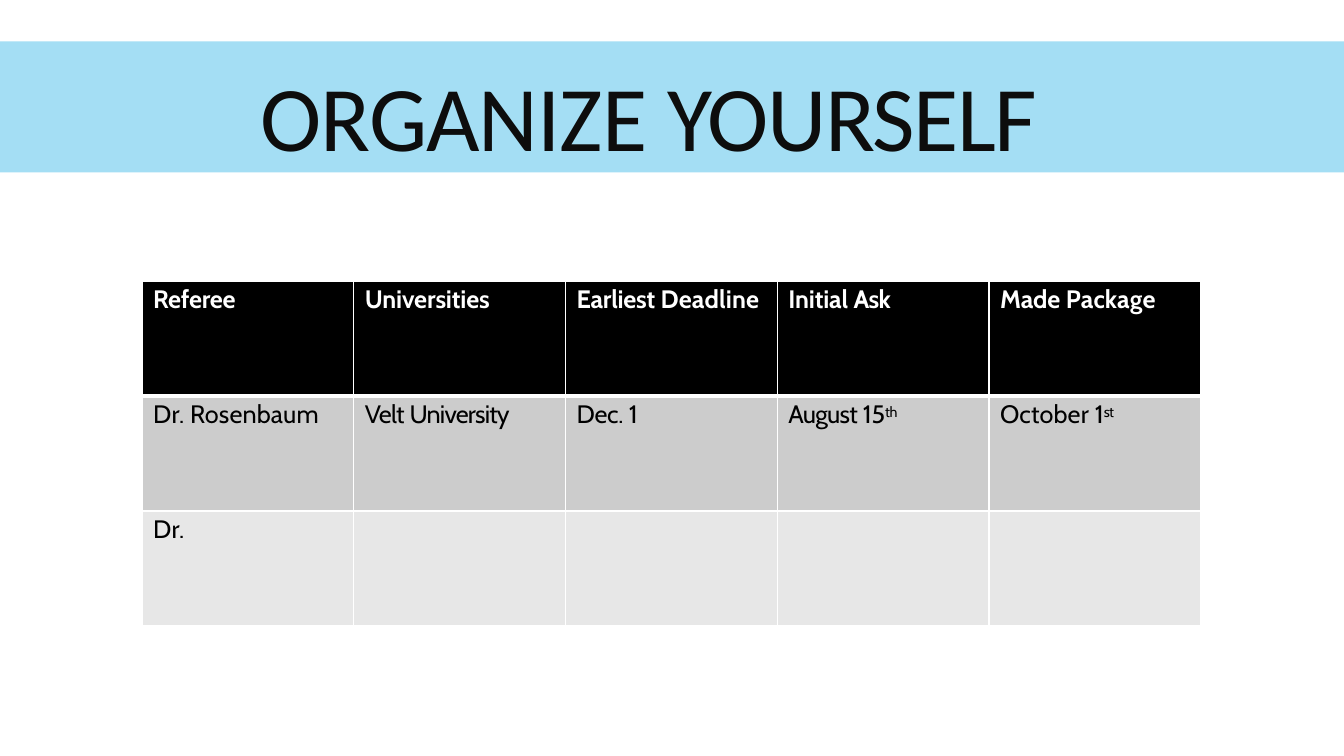
from lxml.etree import SubElement
from pptx import Presentation
from pptx.dml.color import RGBColor
from pptx.enum.shapes import MSO_SHAPE as Shape
from pptx.enum.text import MSO_ANCHOR as Anchor, PP_ALIGN as Align
from pptx.oxml import parse_xml
from pptx.oxml.ns import nsdecls, qn
from pptx.util import Inches, Pt

TITLE = [("ORGANIZE ", -0.7), ("YOURSELF", -1.1)]
ROWS = [
    [[("Referee", -0.2)], [("Universities", -0.1)],
     [("Earliest ", -0.2), ("Deadline", 0.1)],
     [("Initial ", -0.1), ("Ask", -0.5)],
     [("Made ", -0.1), ("Package", 0.1)]],
    [[("Dr. Rosenbaum", 0.1)],
     [("Velt ", -0.5), ("University", -0.6)],
     [("Dec. ", -0.2), ("1", -0.6)],
     [("August ", -0.5), ("15", -0.2), ("th", -0.4, 25)],
     [("October ", 0.1), ("1", -0.3), ("st", -0.5, 25)]],
    [[("Dr.", 0.1)], [], [], [], []],
]
ROW_FILLS = ["000000", "CCCCCC", "E7E7E7"]
ROW_INKS = ["FFFFFF", "000000", "000000"]
WIDTH, HEIGHT = 13.33, 7.5
COL_W, ROW_H = 2.1, 1.14


def color(code):
    return RGBColor.from_string(code)


def write(p, parts, font, size, ink, bold=False):
    for text, spacing, *raised in parts:
        r = p.add_run()
        r.text = text
        r.font.name, r.font.size, r.font.bold = font, Pt(size), bold
        r.font.color.rgb = color(ink)
        rPr = r.font._element
        rPr.set("spc", str(round(spacing * 100)))
        if raised:
            rPr.set("baseline", str(raised[0] * 1000))


def add_borders(cell, row):
    tcPr = cell._tc.get_or_add_tcPr()
    widths = {"L": 1, "R": 1, "T": 3 if row == 1 else 1, "B": 3 if row == 0 else 1}
    for i, (side, width) in enumerate(widths.items()):
        ln = parse_xml(f'<a:ln{side} {nsdecls("a")} w="{Pt(width)}"/>')
        fill = SubElement(ln, qn("a:solidFill"))
        SubElement(fill, qn("a:srgbClr"), val="FFFFFF")
        tcPr.insert(i, ln)


prs = Presentation()
prs.slide_width, prs.slide_height = Inches(WIDTH), Inches(HEIGHT)
s = prs.slides.add_slide(prs.slide_layouts[5])

band = s.shapes.add_shape(Shape.RECTANGLE, 0, Inches(0.41), prs.slide_width, Inches(1.3))
band.shadow.inherit = False
band.fill.solid()
band.fill.fore_color.rgb = color("A4DEF4")
band.line.fill.background()

title = s.shapes.title
title._element.addprevious(band._element)
title.left, title.top, title.width, title.height = map(Inches, (1.12, 0.31, 10.63, 1.64))
tf = title.text_frame
tf.word_wrap = True
tf.vertical_anchor = Anchor.MIDDLE
tf.margin_left = tf.margin_right = tf.margin_bottom = 0
tf.margin_top = Inches(0.01)
p = tf.paragraphs[0]
p.alignment = Align.CENTER
p.space_before = Pt(1.1)
write(p, TITLE, "Calibri", 66, "0D0D0D")

n_rows, n_cols = len(ROWS), len(ROWS[0])
table = s.shapes.add_table(n_rows, n_cols, Inches(1.41), Inches(2.79),
                           Inches(n_cols * COL_W), Inches(n_rows * ROW_H)).table
for col in table.columns:
    col.width = Inches(COL_W)
for i, row in enumerate(ROWS):
    table.rows[i].height = Inches(ROW_H)
    for j, parts in enumerate(row):
        cell = table.cell(i, j)
        cell.fill.solid()
        cell.fill.fore_color.rgb = color(ROW_FILLS[i])
        cell.margin_left = Inches(0.11)
        cell.margin_right = cell.margin_bottom = 0
        cell.margin_top = Inches(0.03)
        p = cell.text_frame.paragraphs[0]
        p.space_before = Pt(2.2)
        write(p, parts, "Cabin", 18, ROW_INKS[i], bold=i == 0)
        add_borders(cell, i)

prs.save("out.pptx")
